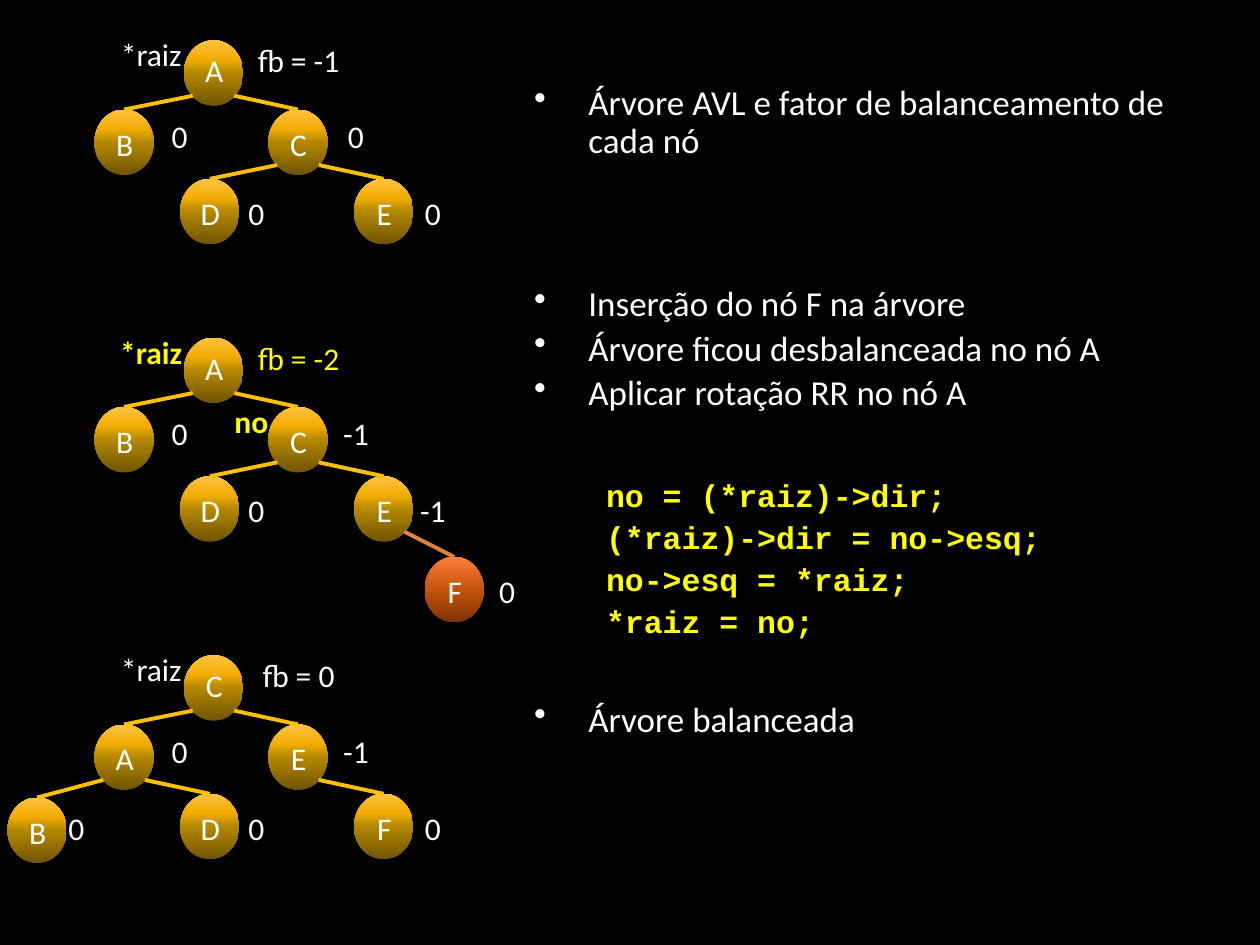
import pptx
import pptx.dml.color
import pptx.enum.shapes
import pptx.enum.text
import pptx.oxml.ns
import pptx.util
from lxml import etree

Inches = pptx.util.Inches
Pt = pptx.util.Pt
RGBColor = pptx.dml.color.RGBColor
qn = pptx.oxml.ns.qn

BLACK = RGBColor(0x00, 0x00, 0x00)
WHITE = RGBColor(0xFF, 0xFF, 0xFF)
YELLOW = RGBColor(0xFF, 0xFF, 0x00)
GOLD_EDGE = RGBColor(0xFF, 0xC0, 0x00)
ORANGE_EDGE = RGBColor(0xDF, 0x80, 0x45)
GOLD_STOPS = [(0, "705400"), (50, "B48800"), (70, "F0AC00"), (100, "FFC342")]
ORANGE_STOPS = [(0, "7D3203"), (50, "C4520B"), (70, "DB631C"), (100, "FF803C")]

LABEL = {"name": "Calibri", "size": Pt(18)}
TOPIC = {"name": "Calibri", "size": Pt(20)}
CODE = {"name": "Courier New", "size": Pt(18), "bold": True}
CENTERED = {"alignment": pptx.enum.text.PP_ALIGN.CENTER}

NODE_W, NODE_H = 0.47, 0.52
EDGE_START_Y = 0.44
EDGE_START_X = {"left": 0.07, "right": 0.4}

# Place in the tree: node offset, balance label offset, parent, side of parent
PLACES = {
    "root": ((1.46, 0), (1.86, -0.04), None, None),
    "left": ((0.75, 0.55), (1.17, 0.56), "root", "left"),
    "right": ((2.13, 0.55), (2.57, 0.56), "root", "right"),
    "left-left": ((0.06, 1.13), (0.35, 1.17), "left", "left"),
    "left-right": ((1.43, 1.1), (1.78, 1.17), "left", "right"),
    "right-left": ((1.43, 1.1), (1.78, 1.17), "right", "left"),
    "right-right": ((2.81, 1.1), (3.18, 1.17), "right", "right"),
    "inserted": ((3.37, 1.74), (3.77, 1.81), "right-right", "right"),
}

# Top of the tree, colour and weight of the root labels, {place: (letter, balance)}
TREES = [
    (0.32, WHITE, False, {
        "root": ("A", "fb = -1"), "left": ("B", "0"), "right": ("C", "0"),
        "right-left": ("D", "0"), "right-right": ("E", "0")}),
    (2.68, YELLOW, True, {
        "root": ("A", "fb = -2"), "left": ("B", "0"), "right": ("C", "-1"),
        "right-left": ("D", "0"), "right-right": ("E", "-1"),
        "inserted": ("F", "0")}),
    (5.2, WHITE, False, {
        "root": ("C", "fb = 0"), "left": ("A", "0"), "right": ("E", "-1"),
        "left-left": ("B", "0"), "left-right": ("D", "0"),
        "right-right": ("F", "0")}),
]

INSERTION_STEPS = [
    "Inserção do nó F na árvore",
    "Árvore ficou desbalanceada no nó A",
    "Aplicar rotação RR no nó A",
]
ROTATION_CODE = [
    "no = (*raiz)->dir;",
    "(*raiz)->dir = no->esq;",
    "no->esq = *raiz;",
    "*raiz = no;",
]


def apply_format(target, values):
    for attribute, value in values.items():
        setattr(target, attribute, value)


def add_text_frame(slide, left, top, width, height):
    frame = slide.shapes.add_textbox(
        Inches(left), Inches(top), Inches(width), Inches(height)).text_frame
    frame.word_wrap = True
    frame.auto_size = pptx.enum.text.MSO_AUTO_SIZE.SHAPE_TO_FIT_TEXT
    return frame


def write(paragraph, text, font, color, layout):
    apply_format(paragraph, layout)
    run = paragraph.add_run()
    run.text = text
    apply_format(run.font, font)
    run.font.color.rgb = color


def add_label(slide, text, left, top, width, color=WHITE, bold=False):
    frame = add_text_frame(slide, left, top, width, 0.4)
    write(frame.paragraphs[0], text, {**LABEL, "bold": bold}, color, CENTERED)


def fill_gradient(shape, stops):
    """Fill from bottom to top with any number of (percent, hex) stops."""
    shape.fill.gradient()
    shape.fill.gradient_angle = 90
    stop_list = shape._element.spPr.find(".//" + qn("a:gsLst"))
    for stop in list(stop_list):
        stop_list.remove(stop)
    for percent, color in stops:
        stop = etree.SubElement(stop_list, qn("a:gs"), pos=str(percent * 1000))
        etree.SubElement(stop, qn("a:srgbClr"), val=color)


def add_node(slide, left, top, stops):
    node = slide.shapes.add_shape(
        pptx.enum.shapes.MSO_SHAPE.OVAL,
        Inches(left), Inches(top), Inches(NODE_W), Inches(NODE_H))
    node.shadow.inherit = False
    node.line.fill.background()
    fill_gradient(node, stops)
    return node


def add_edge(slide, parent, child, side, color):
    start_x = parent.left + Inches(EDGE_START_X[side])
    start_y = parent.top + Inches(EDGE_START_Y)
    edge = slide.shapes.add_connector(
        pptx.enum.shapes.MSO_CONNECTOR.STRAIGHT,
        start_x, start_y, child.left + child.width // 2, child.top)
    edge.end_connect(child, 0)
    edge.line.color.rgb = color
    edge.line.width = Pt(2.25)
    etree.SubElement(edge._element.spPr, qn("a:effectLst"))


def add_tree(slide, top, root_color, root_bold, entries):
    nodes = {}
    for place, (letter, balance) in entries.items():
        (x, y), (balance_x, balance_y), parent, side = PLACES[place]
        is_root, is_new = place == "root", place == "inserted"
        node = add_node(slide, x, top + y, ORANGE_STOPS if is_new else GOLD_STOPS)
        nodes[place] = node
        if parent:
            add_edge(slide, nodes[parent], node, side,
                     ORANGE_EDGE if is_new else GOLD_EDGE)
        add_label(slide, letter, x - 0.15, top + y + (0.04 if is_root else 0.07), 0.78)
        add_label(slide, balance, balance_x, top + balance_y,
                  1.02 if is_root else 0.51, root_color if is_root else WHITE)
    add_label(slide, "*raiz", 0.69, top - 0.09, 1.02, root_color, root_bold)


def indent(paragraph, margin, first_line=0, bullet=None):
    properties = paragraph._p.get_or_add_pPr()
    properties.set("marL", str(Inches(margin)))
    properties.set("indent", str(Inches(first_line)))
    if bullet:
        etree.SubElement(properties, qn("a:buChar"), char=bullet)


def add_notes_block(slide, top, height, topics, code=()):
    """Bulleted topics, followed by optional lines of code."""
    frame = add_text_frame(slide, 4.24, top, 5.34, height)
    apply_format(frame, dict.fromkeys(
        ("margin_left", "margin_top", "margin_right", "margin_bottom"), 0))
    for i, topic in enumerate(topics):
        paragraph = frame.add_paragraph() if i else frame.paragraphs[0]
        indent(paragraph, 0.43, -0.43, "•")
        write(paragraph, topic, TOPIC, WHITE,
              {"line_spacing": 0.9, "space_before": Pt(4 if i else 0)})
    for i, statement in enumerate(code):
        paragraph = frame.add_paragraph()
        indent(paragraph, 0.57)
        write(paragraph, statement, CODE, YELLOW,
              {"level": 1, "line_spacing": 0.9,
               "space_before": Pt(4.6 if i else 38)})


def main():
    deck = pptx.Presentation()
    deck.slide_width, deck.slide_height = Inches(10), Inches(7.5)
    slide = deck.slides.add_slide(deck.slide_layouts[6])
    slide.background.fill.solid()
    slide.background.fill.fore_color.rgb = BLACK

    for tree in TREES:
        add_tree(slide, *tree)
    add_label(slide, "no", 1.64, 3.14, 0.71, YELLOW, True)

    add_notes_block(slide, 0.68, 0.61,
                    ["Árvore AVL e fator de balanceamento de cada nó"])
    add_notes_block(slide, 2.27, 2.82, INSERTION_STEPS, ROTATION_CODE)
    add_notes_block(slide, 5.57, 0.3, ["Árvore balanceada"])
    deck.save("out.pptx")


if __name__ == "__main__":
    main()
